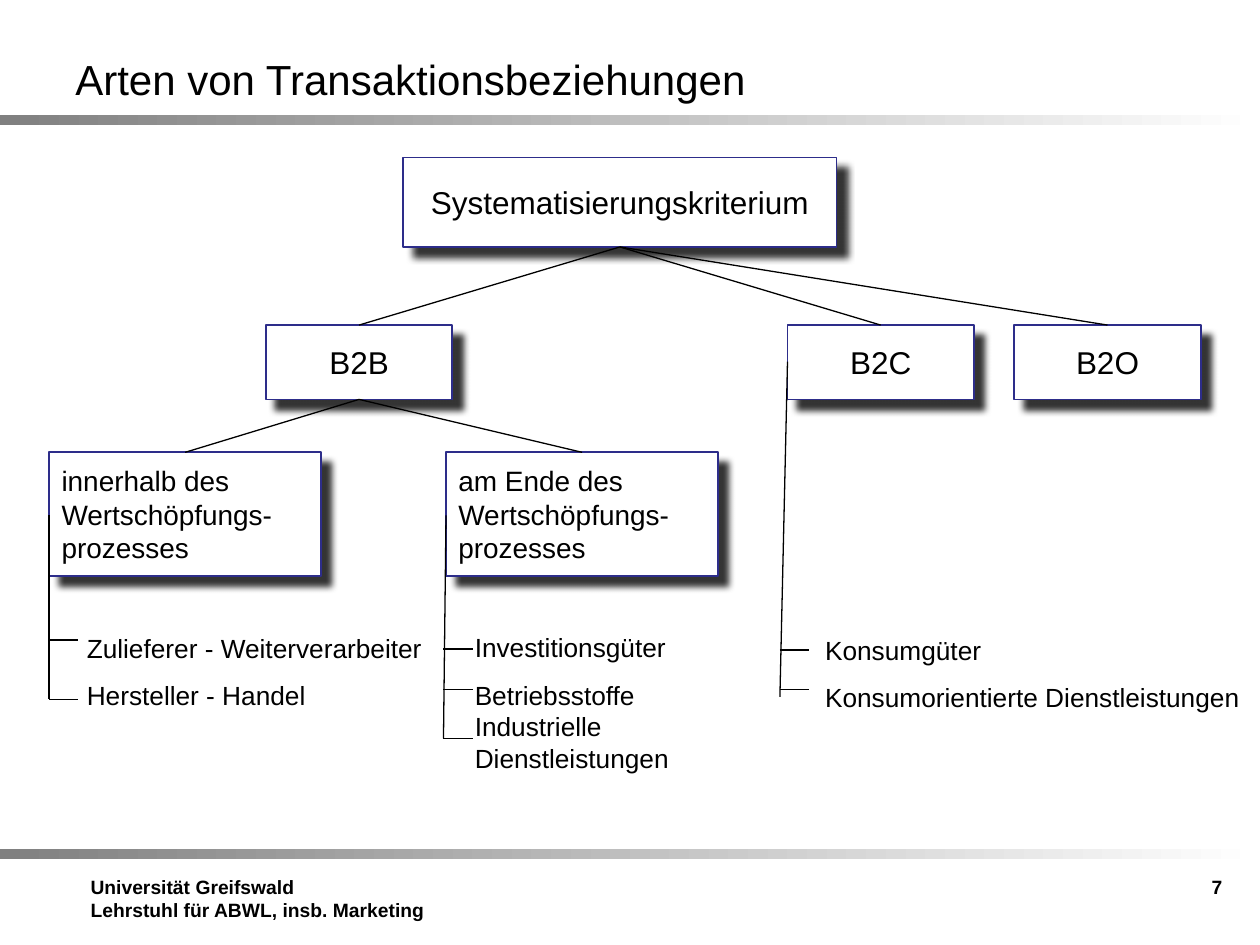
from dataclasses import dataclass

from lxml import etree
from pptx import Presentation
from pptx.dml.color import RGBColor
from pptx.enum import shapes, text
from pptx.oxml import ns
from pptx.util import Inches, Pt


@dataclass(frozen=True)
class Theme:
    font: str = "Arial"
    ink: RGBColor = RGBColor(0, 0, 0)
    paper: RGBColor = RGBColor(255, 255, 255)
    border: RGBColor = RGBColor(0x2D, 0x2D, 0x8A)
    bar: RGBColor = RGBColor(0x80, 0x80, 0x80)
    title: int = 24
    category: int = 18
    process: int = 16
    example: int = 15
    footer: int = 11


@dataclass(frozen=True)
class Node:
    label: str
    left: float
    top: float
    width: float
    height: float
    size: int
    align: text.PP_ALIGN = text.PP_ALIGN.CENTER

    @property
    def top_mid(self) -> tuple[float, float]:
        return self.left + self.width / 2, self.top

    @property
    def bottom_mid(self) -> tuple[float, float]:
        return self.left + self.width / 2, self.top + self.height


@dataclass(frozen=True)
class Line:
    words: str
    spacing: float = 1.0


@dataclass(frozen=True)
class Examples:
    """A list of examples with the trunk and ticks that tie it to its node."""
    left: float
    top: float
    width: float
    height: float
    lines: tuple[Line, ...]
    trunk: tuple[tuple[float, float], tuple[float, float]]
    ticks: tuple[float, ...]


THEME = Theme()
TICK = 0.23

# Tree of transaction types
root = Node("Systematisierungskriterium", 3.2, 1.25, 3.44, 0.71, THEME.category)
b2b, b2c, b2o = (Node(label, left, 2.58, 1.48, 0.59, THEME.category)
                 for label, left in (("B2B", 2.11), ("B2C", 6.25), ("B2O", 8.05)))
within, at_end = (
    Node(f"{stage} des Wertschöpfungs-prozesses", left, 3.59, 2.16, 0.98,
         THEME.process, text.PP_ALIGN.LEFT)
    for stage, left in (("innerhalb", 0.39), ("am Ende", 3.54)))
BRANCHES = {root: (b2b, b2c, b2o), b2b: (within, at_end)}

EXAMPLES = (
    Examples(0.59, 4.84, 3.08, 0.81,
             (Line("Zulieferer - Weiterverarbeiter", 1.5),
              Line("Hersteller - Handel", 1.5)),
             ((0.39, 4.09), (0.39, 5.55)), (5.08, 5.55)),
    Examples(3.67, 4.84, 2.66, 1.36,
             (Line("Investitionsgüter", 1.5), Line("Betriebsstoffe", 1.5),
              Line("Industrielle Dienstleistungen")),
             ((3.54, 4.09), (3.52, 5.86)), (5.15, 5.47, 5.86)),
    Examples(6.45, 4.86, 3.55, 1.19,
             (Line("Konsumgüter", 1.5),
              Line("Konsumorientierte Dienstleistungen", 1.5)),
             ((6.25, 2.87), (6.19, 5.53)), (5.16, 5.47)),
)


def write(frame, lines: tuple[Line, ...], size: int, bold: bool = False,
          align: text.PP_ALIGN = text.PP_ALIGN.LEFT,
          anchor: text.MSO_ANCHOR = text.MSO_ANCHOR.TOP) -> None:
    frame.word_wrap = True
    frame.vertical_anchor = anchor
    for index, line in enumerate(lines):
        paragraph = frame.add_paragraph() if index else frame.paragraphs[0]
        paragraph.alignment = align
        paragraph.line_spacing = line.spacing
        run = paragraph.add_run()
        run.text = line.words
        run.font.name = THEME.font
        run.font.size = Pt(size)
        run.font.bold = bold
        run.font.color.rgb = THEME.ink


def add_text(slide, left: float, top: float, width: float, height: float,
             lines: tuple[Line, ...], size: int, **style) -> None:
    box = slide.shapes.add_textbox(
        Inches(left), Inches(top), Inches(width), Inches(height))
    write(box.text_frame, lines, size, **style)


def add_rectangle(slide, left: float, top: float, width: float, height: float):
    rectangle = slide.shapes.add_shape(
        shapes.MSO_SHAPE.RECTANGLE,
        Inches(left), Inches(top), Inches(width), Inches(height))
    rectangle.shadow.inherit = False
    return rectangle


def add_bar(slide, top: float) -> None:
    bar = add_rectangle(slide, 0, top, 10, 0.08)
    bar.line.fill.background()
    bar.fill.gradient()
    bar.fill.gradient_angle = 0
    stops = zip(bar.fill.gradient_stops, (THEME.bar, THEME.paper), (0, 1))
    for stop, color, position in stops:
        stop.color.rgb = color
        stop.position = position


def add_drop_shadow(shape) -> None:
    effects = shape._element.spPr.find(ns.qn("a:effectLst"))
    shadow = etree.SubElement(
        effects, ns.qn("a:outerShdw"), blurRad=str(Pt(4)), dist=str(Pt(8)),
        dir=str(45 * 60000), algn="tl", rotWithShape="0")
    color = etree.SubElement(shadow, ns.qn("a:srgbClr"), val=str(THEME.ink))
    etree.SubElement(color, ns.qn("a:alpha"), val="80000")


def add_node(slide, node: Node) -> None:
    box = add_rectangle(slide, node.left, node.top, node.width, node.height)
    box.fill.solid()
    box.fill.fore_color.rgb = THEME.paper
    box.line.color.rgb = THEME.border
    box.line.width = Pt(1)
    add_drop_shadow(box)
    write(box.text_frame, (Line(node.label),), node.size,
          align=node.align, anchor=text.MSO_ANCHOR.MIDDLE)


def add_line(slide, start: tuple[float, float], end: tuple[float, float]) -> None:
    line = slide.shapes.add_connector(
        shapes.MSO_CONNECTOR.STRAIGHT,
        *(Inches(value) for value in (*start, *end)))
    line.line.color.rgb = THEME.ink
    line.line.width = Pt(0.75)
    etree.SubElement(line._element.spPr, ns.qn("a:effectLst"))


def add_examples(slide, group: Examples) -> None:
    add_text(slide, group.left, group.top, group.width, group.height,
             group.lines, THEME.example)
    add_line(slide, *group.trunk)
    foot = group.trunk[1][0]
    for height in group.ticks:
        add_line(slide, (foot, height), (foot + TICK, height))


def main() -> None:
    deck = Presentation()
    deck.slide_width, deck.slide_height = Inches(10), Inches(7.5)
    slide = deck.slides.add_slide(deck.slide_layouts[6])

    # Frame: bars, title, footer and page number
    for top in (0.91, 6.74):
        add_bar(slide, top)
    add_text(slide, 0.5, 0.31, 9, 0.63, (Line("Arten von Transaktionsbeziehungen"),),
             THEME.title, anchor=text.MSO_ANCHOR.MIDDLE)
    add_text(slide, 0.62, 6.9, 2.91, 0.59,
             (Line("Universität Greifswald"),
              Line("Lehrstuhl für ABWL, insb. Marketing")),
             THEME.footer, bold=True)
    add_text(slide, 7.47, 6.9, 2.33, 0.57, (Line("7"),), THEME.footer,
             bold=True, align=text.PP_ALIGN.RIGHT)

    # Tree: nodes first, then the branches above their shadows
    for node in (root, b2b, b2c, b2o, within, at_end):
        add_node(slide, node)
    for parent, children in BRANCHES.items():
        for child in children:
            add_line(slide, parent.bottom_mid, child.top_mid)

    # Examples below the tree
    for group in EXAMPLES:
        add_examples(slide, group)

    deck.save("out.pptx")


if __name__ == "__main__":
    main()
